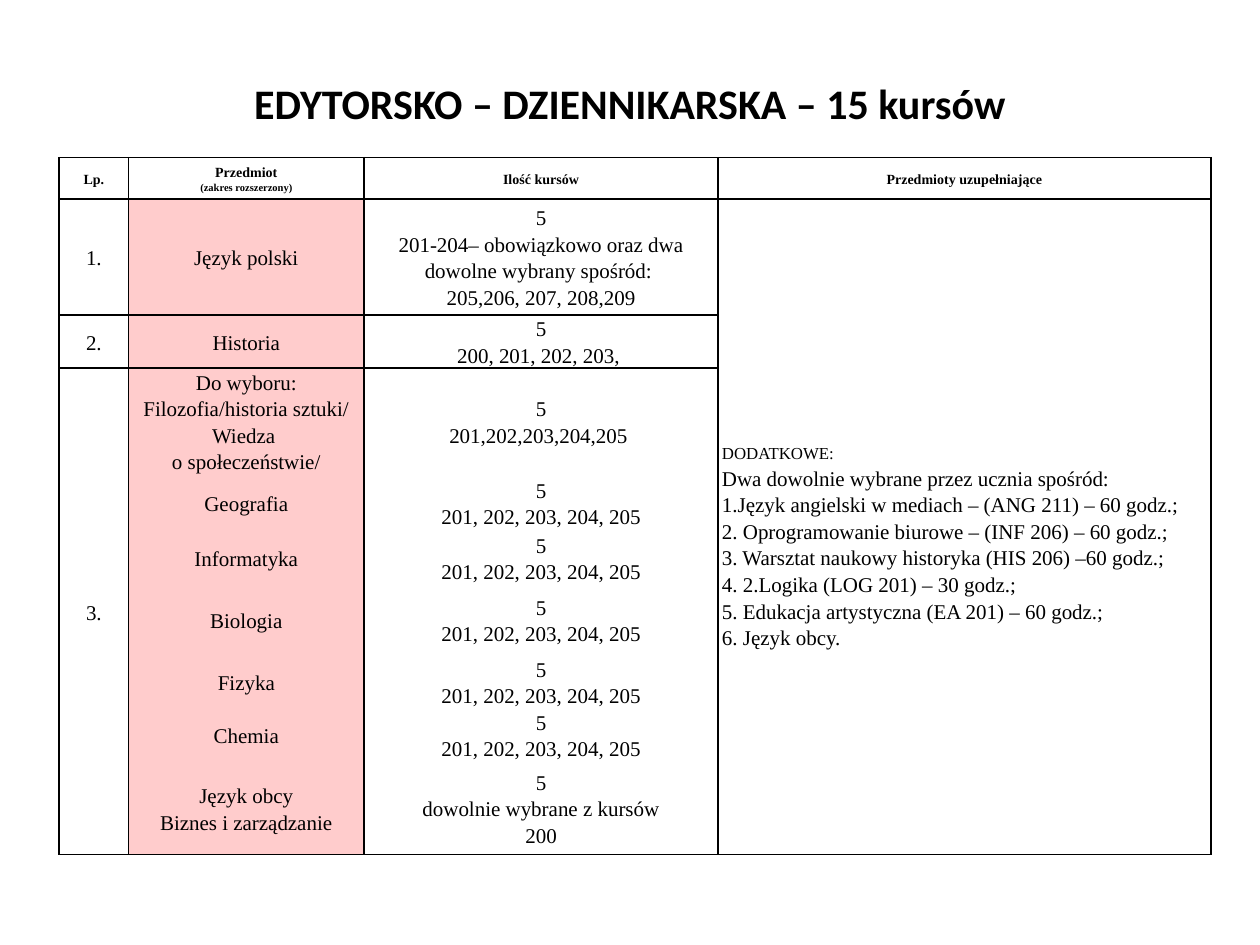
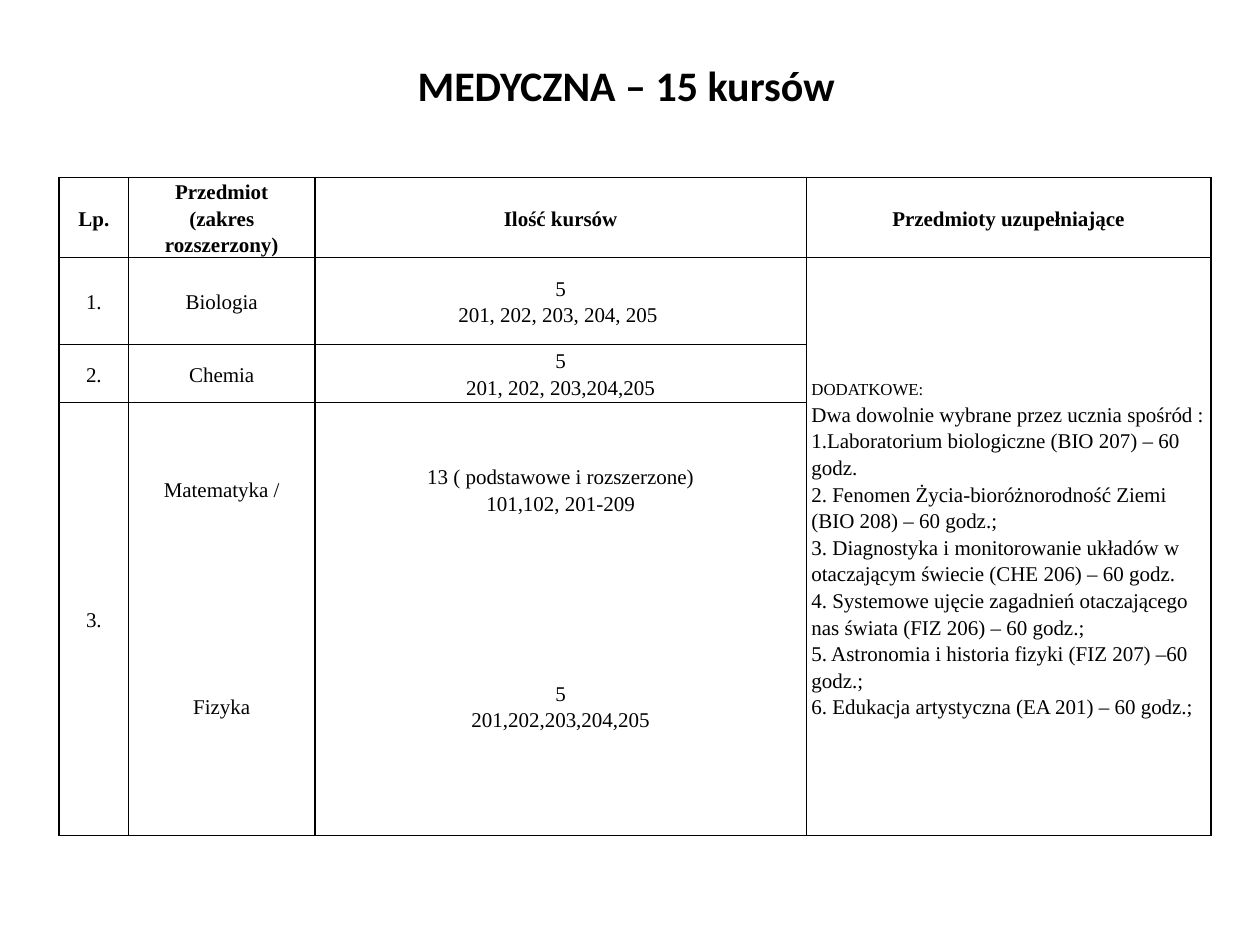
from pptx import Presentation
from pptx.dml.color import RGBColor
from pptx.enum import text
from pptx.oxml import parse_xml
from pptx.oxml.ns import nsdecls
from pptx.util import Inches, Pt

# Content: each row is (number, subject, courses); rows without a number continue the one above
FIVE = "5\n201, 202, 203, 204, 205"
SLIDES = [
    dict(
        title="EDYTORSKO – DZIENNIKARSKA – 15 kursów", title_at=(0.5, 0.3), top=1.25,
        cols=[0.55, 1.87, 2.81, 3.91],
        heights=[0.33, 0.92, 0.39, 0.79, 0.45, 0.37, 0.56, 0.37, 0.37, 0.74],
        head_sizes=(8, 6), subject_fill="FFCCCC", inset=0.03, extras_top=0.27,
        rows=[
            ("1.", "Język polski", "5\n201-204– obowiązkowo oraz dwa dowolne wybrany spośród: \n"
                                   "205,206, 207, 208,209"),
            ("2.", "Historia", "5\n200, 201, 202, 203, "),
            ("3.", "Do wyboru:\nFilozofia/historia sztuki/\nWiedza \no społeczeństwie/",
             "5\n201,202,203,204,205 "),
            ("", "Geografia", FIVE),
            ("", "Informatyka", FIVE),
            ("", "Biologia", FIVE),
            ("", "Fizyka", FIVE),
            ("", "Chemia", FIVE),
            ("", "Język obcy\nBiznes i zarządzanie", "5\ndowolnie wybrane z kursów\n200"),
        ],
        extras=[
            "dodatkowe:",
            "Dwa dowolnie wybrane przez ucznia spośród:",
            "1.Język angielski w mediach – (ANG 211) – 60 godz.;",
            "2. Oprogramowanie biurowe – (INF 206) – 60 godz.;",
            "3. Warsztat naukowy historyka (HIS 206) –60 godz.;",
            "4. 2.Logika (LOG 201) – 30 godz.;",
            "5. Edukacja artystyczna (EA 201) – 60 godz.;",
            "6. Język obcy.",
        ],
    ),
    dict(
        title="MEDYCZNA – 15 kursów", title_at=(0.47, 0.16), top=1.41,
        cols=[0.55, 1.48, 3.9, 3.21],
        heights=[0.57, 0.69, 0.46, 1.38, 2.06],
        head_sizes=(12, 12), subject_fill="FFFFFF", inset=0.04, extras_top=0,
        rows=[
            ("1.", "Biologia", FIVE + " "),
            ("2.", "Chemia", "5\n201, 202, 203,204,205"),
            ("3.", "Matematyka /", "13 ( podstawowe i rozszerzone)\n101,102, 201-209"),
            ("", "Fizyka", "5\n201,202,203,204,205"),
        ],
        extras=[
            "dodatkowe:",
            "Dwa dowolnie wybrane przez ucznia spośród :",
            "1.Laboratorium biologiczne (BIO 207) – 60 godz.",
            "2. Fenomen Życia-bioróżnorodność Ziemi (BIO 208) – 60 godz.;",
            "3. Diagnostyka i monitorowanie układów w otaczającym świecie (CHE 206) – 60 godz.",
            "4. Systemowe ujęcie zagadnień otaczającego nas świata (FIZ 206) – 60 godz.;",
            "5. Astronomia i historia fizyki (FIZ 207) –60 godz.;",
            "6. Edukacja artystyczna (EA 201) – 60 godz.;",
        ],
    ),
]
HEAD = ("Lp.", "Przedmiot\n(zakres rozszerzony)", "Ilość kursów", "Przedmioty uzupełniające")

# Leading is the line height as a share of the type size
THEME = dict(title_font="Calibri", body_font="Times New Roman", ink="000000", paper="FFFFFF",
             title=24, body=12, leading=1.27, border=1, table_left=0.47, title_size=(9, 1.03))
CENTER, LEFT = text.PP_ALIGN.CENTER, text.PP_ALIGN.LEFT


def write(tf, content, sizes, font, bold=False, align=CENTER, leading=None):
    """Fill a text frame; sizes are for the first paragraph and for the others."""
    tf.text = content
    for i, p in enumerate(tf.paragraphs):
        size = sizes[min(i, 1)]
        p.alignment = align
        if leading:
            p.line_spacing = Pt(round(size * leading, 1))
        for r in p.runs:
            r.font.name, r.font.bold, r.font.size = font, bold, Pt(size)
            r.font.color.rgb = RGBColor.from_string(THEME["ink"])


def set_borders(cell, sides):
    """Draw the listed sides (L, R, T, B) and clear the others."""
    tc_pr = cell._tc.get_or_add_tcPr()
    line = f'<a:solidFill><a:srgbClr val="{THEME["ink"]}"/></a:solidFill>'
    for side in "LRTB":
        paint = line if side in sides else "<a:noFill/>"
        tc_pr.append(parse_xml(
            f'<a:ln{side} {nsdecls("a")} w="{Pt(THEME["border"])}">{paint}</a:ln{side}>'))


def add_title(slide, data):
    box = slide.shapes.add_textbox(*map(Inches, data["title_at"] + THEME["title_size"]))
    tf = box.text_frame
    tf.word_wrap, tf.vertical_anchor = True, text.MSO_ANCHOR.MIDDLE
    write(tf, data["title"], (THEME["title"],) * 2, THEME["title_font"], bold=True)


def add_course_table(slide, data):
    cols, heights, rows = data["cols"], data["heights"], data["rows"]
    last = len(rows)
    table = slide.shapes.add_table(
        last + 1, len(cols), Inches(THEME["table_left"]), Inches(data["top"]),
        Inches(sum(cols)), Inches(sum(heights))).table
    table.first_row = table.horz_banding = False
    for column, width in zip(table.columns, cols):
        column.width = Inches(width)
    for row, height in zip(table.rows, heights):
        row.height = Inches(height)

    # Cell frames: a row opens a group when it has a number; merged cells are framed all round
    starts = [True] + [bool(number) for number, *_ in rows] + [True]
    final_start = max(i for i in range(1, last + 1) if starts[i])
    for i in range(last + 1):
        for j in range(len(cols)):
            cell = table.cell(i, j)
            opens = i < 2 if j == 3 else starts[i]
            closes = starts[i + 1] or (i, j) == (final_start, 0)
            if j == 3:
                closes = i in (0, 1, last)
            set_borders(cell, "LR" + "T" * opens + "B" * closes)
            cell.fill.solid()
            fill = data["subject_fill"] if j == 1 and i else THEME["paper"]
            cell.fill.fore_color.rgb = RGBColor.from_string(fill)
            cell.margin_left = cell.margin_right = Inches(data["inset"])
            cell.margin_top = cell.margin_bottom = 0
            cell.vertical_anchor = text.MSO_ANCHOR.MIDDLE

    # Heading and course rows
    style = dict(font=THEME["body_font"], leading=THEME["leading"])
    body = (THEME["body"],) * 2
    for j, label in enumerate(HEAD):
        write(table.cell(0, j).text_frame, label, data["head_sizes"], bold=True, **style)
    for i, row in enumerate(rows, 1):
        for j, content in enumerate(row):
            if content:
                write(table.cell(i, j).text_frame, content, body, **style)

    # Merged cells: the last number and the extra subjects
    table.cell(final_start, 0).merge(table.cell(last, 0))
    extras = table.cell(1, 3)
    extras.merge(table.cell(last, 3))
    extras.margin_top = Inches(data["extras_top"])
    write(extras.text_frame, "\n".join(data["extras"]), body, align=LEFT, **style)
    extras.text_frame.paragraphs[0].runs[0]._r.get_or_add_rPr().set("cap", "small")


def main():
    prs = Presentation()
    prs.slide_width, prs.slide_height = Inches(10), Inches(7.5)
    for data in SLIDES:
        s = prs.slides.add_slide(prs.slide_layouts[6])
        add_title(s, data)
        add_course_table(s, data)
    prs.save("out.pptx")


if __name__ == "__main__":
    main()
